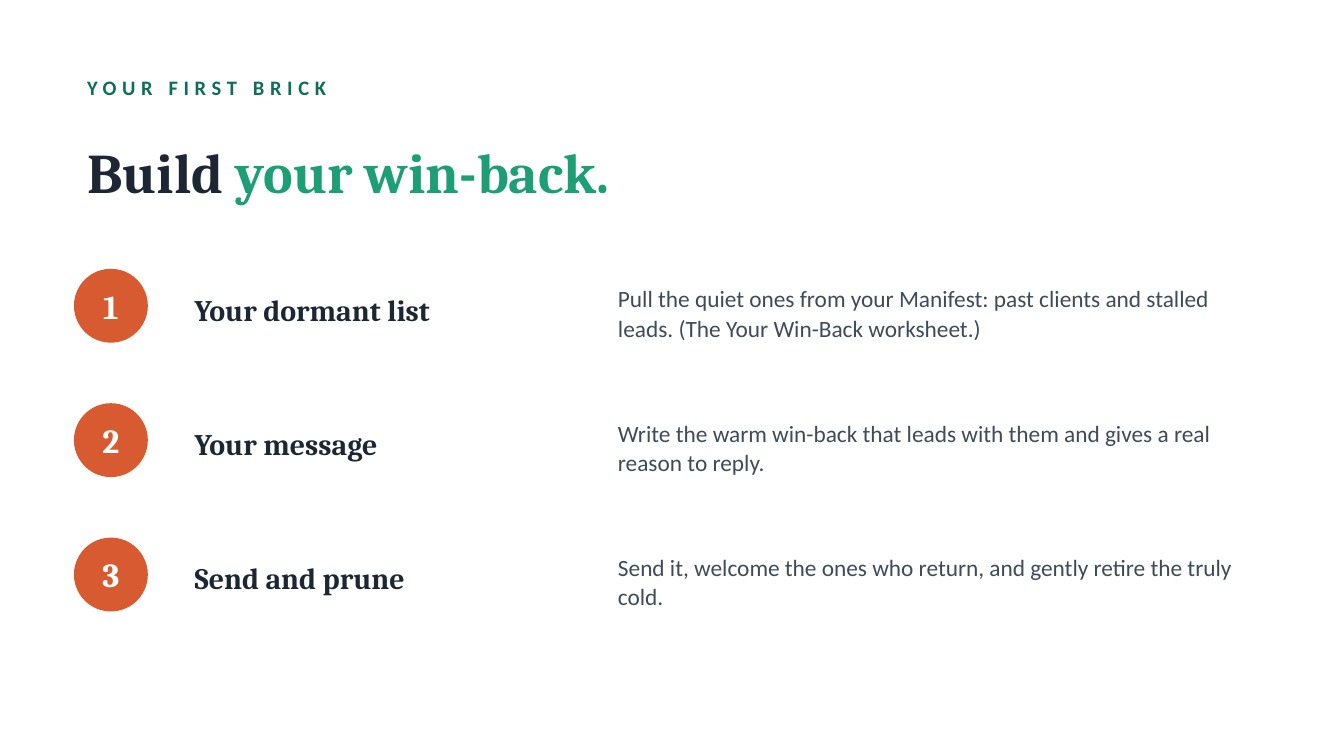
import pptx
import pptx.dml.color
import pptx.enum.shapes
import pptx.enum.text
import pptx.util

Pt = pptx.util.Pt
RGBColor = pptx.dml.color.RGBColor
Align = pptx.enum.text.PP_ALIGN

WHITE = RGBColor(0xFF, 0xFF, 0xFF)
INK = RGBColor(0x1C, 0x27, 0x33)
SLATE = RGBColor(0x3F, 0x4B, 0x59)
DARK_GREEN = RGBColor(0x0F, 0x6E, 0x56)
GREEN = RGBColor(0x1D, 0x9E, 0x75)
ORANGE = RGBColor(0xD8, 0x5A, 0x30)

LEFT = 39.6
CONTENT_WIDTH = 640.8
FIRST_STEP_TOP = 144
STEP_PITCH = 72
BADGE_SIZE = 39.6

STEPS = [
    ("Your dormant list",
     "Pull the quiet ones from your Manifest: past clients and stalled leads. "
     "(The Your Win-Back worksheet.)"),
    ("Your message",
     "Write the warm win-back that leads with them and gives a real reason to reply."),
    ("Send and prune",
     "Send it, welcome the ones who return, and gently retire the truly cold."),
]


class SlideBuilder:
    heading_font = "Cambria"
    body_font = "Calibri"

    def __init__(self, slide):
        self.slide = slide

    def format_run(self, run, font_name, size, color, bold):
        run.font.name = font_name
        run.font.size = Pt(size)
        run.font.color.rgb = color
        run.font.bold = bold

    def prepare_frame(self, shape, alignment=Align.LEFT):
        frame = shape.text_frame
        frame.word_wrap = True
        frame.auto_size = pptx.enum.text.MSO_AUTO_SIZE.NONE
        frame.vertical_anchor = pptx.enum.text.MSO_ANCHOR.MIDDLE
        frame.paragraphs[0].alignment = alignment
        return frame

    def title(self, left, top, width, height, parts, size):
        shape = self.slide.shapes.title
        shape.left, shape.top = Pt(left), Pt(top)
        shape.width, shape.height = Pt(width), Pt(height)
        paragraph = self.prepare_frame(shape).paragraphs[0]
        for text, color in parts:
            run = paragraph.add_run()
            run.text = text
            self.format_run(run, self.heading_font, size, color, True)

    def text(self, left, top, width, height, text, font_name, size, color,
             bold=False, line_spacing=None, letter_spacing=None):
        shape = self.slide.shapes.add_textbox(Pt(left), Pt(top), Pt(width), Pt(height))
        paragraph = self.prepare_frame(shape).paragraphs[0]
        paragraph.text = text
        paragraph.line_spacing = line_spacing
        run = paragraph.runs[0]
        self.format_run(run, font_name, size, color, bold)
        if letter_spacing:
            run._r.get_or_add_rPr().set("spc", str(letter_spacing * 100))

    def badge(self, left, top, diameter, text):
        shape = self.slide.shapes.add_shape(
            pptx.enum.shapes.MSO_SHAPE.OVAL, Pt(left), Pt(top), Pt(diameter), Pt(diameter))
        shape.shadow.inherit = False
        shape.fill.solid()
        shape.fill.fore_color.rgb = ORANGE
        shape.line.fill.background()
        shape.text_frame.text = text
        frame = self.prepare_frame(shape, Align.CENTER)
        frame.margin_left = frame.margin_right = 0
        frame.margin_top = frame.margin_bottom = 0
        self.format_run(frame.paragraphs[0].runs[0], self.heading_font, 18, WHITE, True)


def main():
    presentation = pptx.Presentation()
    presentation.slide_width, presentation.slide_height = Pt(720), Pt(405)
    slide = presentation.slides.add_slide(
        presentation.slide_layouts.get_by_name("Title Only"))
    slide.background.fill.solid()
    slide.background.fill.fore_color.rgb = WHITE
    builder = SlideBuilder(slide)

    # Heading
    builder.text(LEFT, 36, CONTENT_WIDTH, 21.6, "YOUR FIRST BRICK",
                 builder.body_font, 11, DARK_GREEN, bold=True, letter_spacing=3)
    builder.title(LEFT, 61.2, CONTENT_WIDTH, 61.2,
                  [("Build ", INK), ("your win-back.", GREEN)], 30)

    # Numbered steps
    for index, (name, description) in enumerate(STEPS):
        top = FIRST_STEP_TOP + index * STEP_PITCH
        builder.badge(LEFT, top, BADGE_SIZE, str(index + 1))
        builder.text(97.2, top - 3.6, 216, 50.4, name,
                     builder.heading_font, 16, INK, bold=True)
        builder.text(324, top - 3.6, 360, 54, description,
                     builder.body_font, 12.5, SLATE, line_spacing=1.05)

    presentation.save("out.pptx")


if __name__ == "__main__":
    main()
